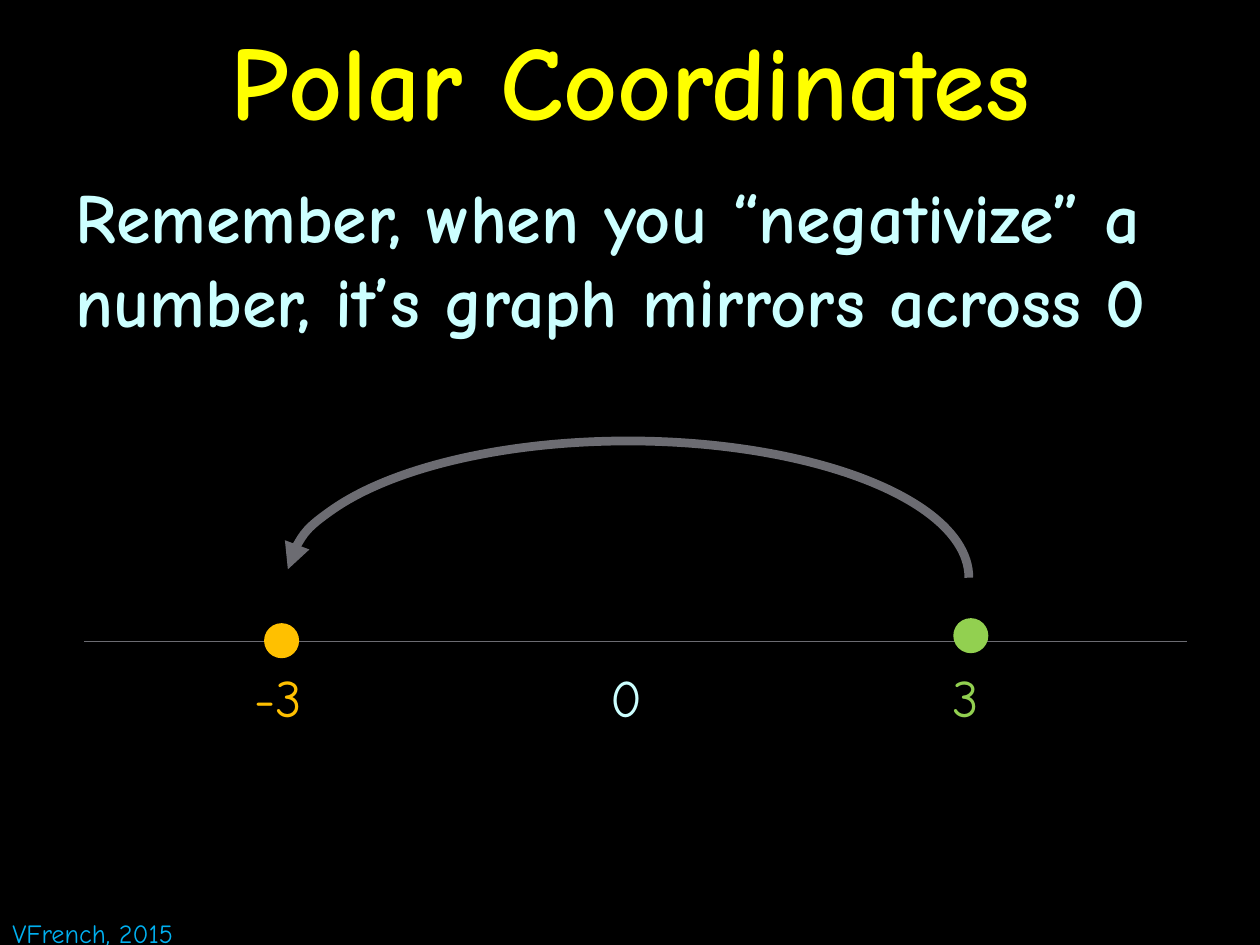
from lxml import etree
from pptx import Presentation
from pptx.dml.color import RGBColor
from pptx.enum.shapes import MSO_CONNECTOR, MSO_SHAPE
from pptx.enum.text import MSO_ANCHOR, MSO_AUTO_SIZE, PP_ALIGN
from pptx.oxml.ns import qn
from pptx.util import Inches, Pt

OVAL, ARC = MSO_SHAPE.OVAL, MSO_SHAPE.ARC
STRAIGHT = MSO_CONNECTOR.STRAIGHT
MIDDLE, TOP = MSO_ANCHOR.MIDDLE, MSO_ANCHOR.TOP
CENTER, LEFT = PP_ALIGN.CENTER, PP_ALIGN.LEFT
FIXED, GROW = MSO_AUTO_SIZE.NONE, MSO_AUTO_SIZE.SHAPE_TO_FIT_TEXT

FONT = "Comic Neue"
BLACK = RGBColor(0x00, 0x00, 0x00)
YELLOW = RGBColor(0xFF, 0xFF, 0x00)
PALE_CYAN = RGBColor(0xCC, 0xFF, 0xFF)
GRAY = RGBColor(0x6C, 0x6C, 0x72)
GREEN = RGBColor(0x92, 0xD0, 0x50)
ORANGE = RGBColor(0xFF, 0xC0, 0x00)
BLUE = RGBColor(0x00, 0xB0, 0xF0)

prs = Presentation()
prs.slide_width, prs.slide_height = Inches(10), Inches(7.5)
U = prs.slide_width // 100  # square grid, 100 columns by 75 rows


def grid(*cells):
    return [round(c * U) for c in cells]


def add_text(p, text, size, color, bold=False):
    r = p.add_run()
    r.text = text
    r.font.name, r.font.size, r.font.bold = FONT, Pt(size), bold
    r.font.color.rgb = color


s = prs.slides.add_slide(prs.slide_layouts[1])
s.background.fill.solid()
s.background.fill.fore_color.rgb = BLACK

# Title and body
title, body = s.placeholders
for sp, box, anchor, align, text, size, color in (
    (title, (0, 0, 100, 12.5), MIDDLE, CENTER, "Polar Coordinates", 60, YELLOW),
    (body, (5, 13.3, 93.3, 61.7), TOP, LEFT,
     "Remember, when you “negativize” a number, it’s graph mirrors across 0",
     40, PALE_CYAN),
):
    sp.left, sp.top, sp.width, sp.height = grid(*box)
    tf = sp.text_frame
    tf.auto_size, tf.vertical_anchor = FIXED, anchor
    p = tf.paragraphs[0]
    p.alignment = align
    add_text(p, text, size, color, bold=True)

p.space_before = Pt(8)
pPr = p._p.get_or_add_pPr()
pPr.set("marL", "0")
pPr.set("indent", "0")
etree.SubElement(pPr, qn("a:buNone"))

# Number line
axis = s.shapes.add_connector(STRAIGHT, *grid(6.7, 50.9, 94.2, 50.9))
axis.line.color.rgb = GRAY
axis.line.width = Pt(0.75)
etree.SubElement(axis._element.spPr, qn("a:effectLst"))

# Mirror arrow from 3 to -3
arc = s.shapes.add_shape(ARC, *grid(22.8, 35, 54.1, 21.7))
arc.adjustments[0], arc.adjustments[1] = 108.84, 0
arc.shadow.inherit = False
arc.fill.background()
arc.line.color.rgb = GRAY
arc.line.width = Pt(5)
etree.SubElement(arc.line._get_or_add_ln(), qn("a:headEnd"), type="triangle")

# Number labels and credit
for text, x, y, w, h, size, color in (
    ("3", 74.6, 52.3, 4.6, 6.1, 30, GREEN),
    ("-3", 19.2, 52.3, 6.3, 6.1, 30, ORANGE),
    ("0", 47.5, 52.3, 4.6, 6.1, 30, PALE_CYAN),
    ("VFrench, 2015", 0, 72.3, 16.2, 3.5, 15, BLUE),
):
    tf = s.shapes.add_textbox(*grid(x, y, w, h)).text_frame
    tf.word_wrap, tf.auto_size = False, GROW
    add_text(tf.paragraphs[0], text, size, color)

# Points
for x, y, color in ((75.8, 49.2, GREEN), (21.1, 49.6, ORANGE)):
    dot = s.shapes.add_shape(OVAL, *grid(x, y, 2.5, 2.5))
    dot.shadow.inherit = False
    dot.fill.solid()
    dot.fill.fore_color.rgb = color
    dot.line.color.rgb = color
    dot.line.width = Pt(2)

prs.save("out.pptx")
